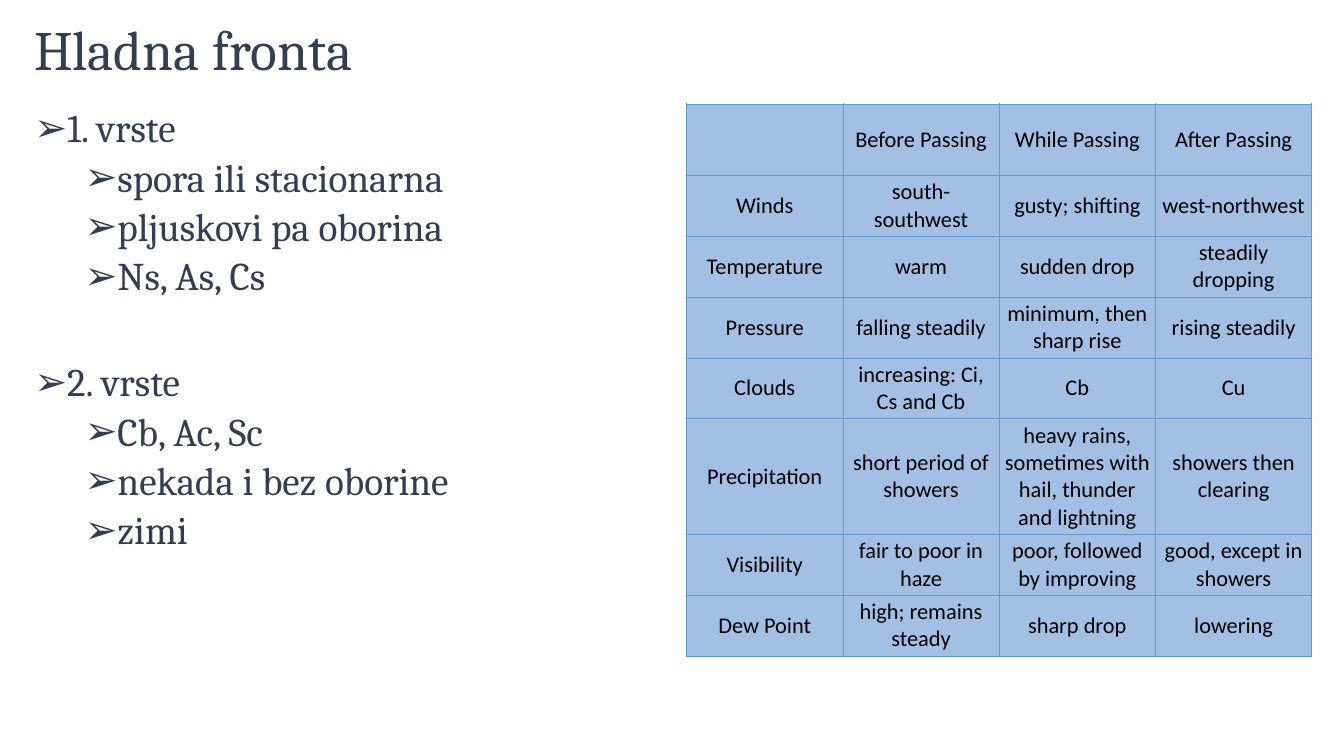
from lxml.etree import SubElement
from pptx import Presentation
from pptx.dml.color import RGBColor
from pptx.enum.text import MSO_ANCHOR as Anchor, MSO_AUTO_SIZE as AutoSize, PP_ALIGN as Align
from pptx.oxml.ns import qn
from pptx.util import Inches, Pt

SLATE = "333F50"
BLACK = "000000"
CELL_BLUE = "A3C0E4"
BORDER_BLUE = "5B9BD5"

FRONT_TYPES = [
    ("1. vrste", ["spora ili stacionarna", "pljuskovi pa oborina", "Ns, As, Cs"]),
    ("2. vrste", ["Cb, Ac, Sc", "nekada i bez oborine", "zimi"]),
]

WEATHER = [
    ("", "Before Passing", "While Passing", "After Passing"),
    ("Winds", "south-southwest", "gusty; shifting", "west-northwest"),
    ("Temperature", "warm", "sudden drop", "steadily dropping"),
    ("Pressure", "falling steadily", "minimum, then sharp rise", "rising steadily"),
    ("Clouds", "increasing: Ci, Cs and Cb", "Cb", "Cu"),
    ("Precipitation", "short period of showers",
     "heavy rains, sometimes with hail, thunder and lightning", "showers then clearing"),
    ("Visibility", "fair to poor in haze", "poor, followed by improving", "good, except in showers"),
    ("Dew Point", "high; remains steady", "sharp drop", "lowering"),
]
ROW_HEIGHTS = [0.71, 0.38, 0.38, 0.55, 0.38, 0.87, 0.55, 0.38]


def rgb(hex_code):
    return RGBColor.from_string(hex_code)


def set_font(paragraph, face, size, color):
    paragraph.font.name = face
    paragraph.font.size = Pt(size)
    paragraph.font.color.rgb = rgb(color)


def place(placeholder, left, top, width, height, anchor):
    placeholder.left, placeholder.top = Inches(left), Inches(top)
    placeholder.width, placeholder.height = Inches(width), Inches(height)
    frame = placeholder.text_frame
    frame.word_wrap = True
    frame.auto_size = AutoSize.NONE
    frame.vertical_anchor = anchor
    return frame


def add_heading(slide, left, top, width, height):
    frame = place(slide.shapes.title, left, top, width, height, Anchor.MIDDLE)
    heading = frame.paragraphs[0]
    heading.text = "Hladna fronta"
    heading.alignment = Align.LEFT
    heading.line_spacing = 0.9
    set_font(heading, "Cambria", 39.6, SLATE)


def write_bullet(paragraph, text, level, space_before):
    paragraph.text = text
    paragraph.level = level
    properties = paragraph._p.get_or_add_pPr()
    properties.set("marL", str(Inches(0.25 + 0.5 * level)))
    properties.set("indent", str(Inches(-0.25)))
    SubElement(properties, qn("a:buChar")).set("char", "➢")
    paragraph.line_spacing = 0.9
    paragraph.space_before = Pt(space_before)
    set_font(paragraph, "Cambria", 28, SLATE)


def add_front_types(slide, left, top, width, height):
    frame = place(slide.placeholders[1], left, top, width, height, Anchor.TOP)
    for index, (front_type, traits) in enumerate(FRONT_TYPES):
        lead = frame.add_paragraph() if index else frame.paragraphs[0]
        write_bullet(lead, front_type, 0, 45.5 if index else 0)
        for trait in traits:
            write_bullet(frame.add_paragraph(), trait, 1, 5)


def add_borders(cell):
    properties = cell._tc.get_or_add_tcPr()
    for side in ("lnL", "lnR", "lnT", "lnB"):
        line = SubElement(properties, qn(f"a:{side}"), w=str(Pt(0.5)))
        fill = SubElement(line, qn("a:solidFill"))
        SubElement(fill, qn("a:srgbClr"), val=BORDER_BLUE)


def format_cell(cell, text):
    add_borders(cell)
    cell.fill.solid()
    cell.fill.fore_color.rgb = rgb(CELL_BLUE)
    cell.vertical_anchor = Anchor.MIDDLE
    cell.margin_left = cell.margin_right = Inches(0.05)
    cell.margin_top = cell.margin_bottom = Inches(0.03)
    label = cell.text_frame.paragraphs[0]
    label.text = text
    label.alignment = Align.CENTER
    set_font(label, "Calibri", 16, BLACK)


def add_weather_table(slide, left, top, width, height):
    columns = len(WEATHER[0])
    frame = slide.shapes.add_table(len(WEATHER), columns, Inches(left), Inches(top),
                                   Inches(width), Inches(height))
    table = frame.table
    table.first_row = table.horz_banding = False
    for column in table.columns:
        column.width = Inches(width / columns)
    for row, row_height, texts in zip(table.rows, ROW_HEIGHTS, WEATHER):
        row.height = Inches(row_height)
        for cell, text in zip(row.cells, texts):
            format_cell(cell, text)
    frame.height = Inches(height)


def main():
    deck = Presentation()
    deck.slide_width, deck.slide_height = Inches(13.33), Inches(7.5)
    slide = deck.slides.add_slide(deck.slide_layouts[1])
    add_heading(slide, 0.24, 0.22, 12.18, 0.6)
    add_front_types(slide, 0.24, 1.03, 6.44, 5.67)
    add_weather_table(slide, 6.81, 1.03, 6.2, 5.63)
    deck.save("out.pptx")


if __name__ == "__main__":
    main()
